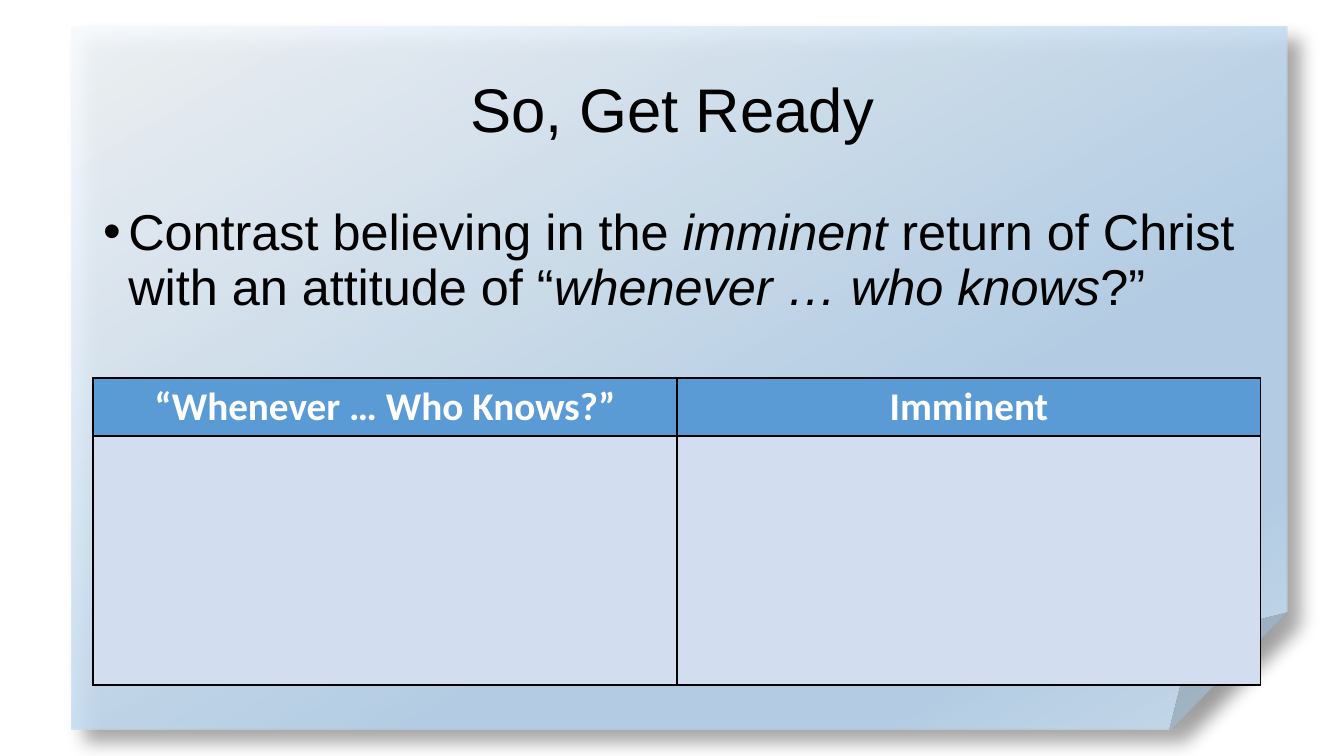
from dataclasses import dataclass

from lxml.etree import SubElement
from pptx import Presentation
from pptx.dml.color import RGBColor
from pptx.enum.shapes import MSO_SHAPE
from pptx.enum.text import MSO_ANCHOR, MSO_AUTO_SIZE, PP_ALIGN
from pptx.oxml.ns import qn
from pptx.util import Emu, Inches, Pt

EMU_PER_PX = 914400 / 100.8
COLOURS = {
    "black": "000000",
    "white": "FFFFFF",
    "header": "5B9BD5",
    "cell": "D2DEEF",
    "pale": "F7FAFD",
    "sky": "B5D2EC",
    "mist": "CEE1F2",
}


@dataclass(frozen=True)
class Box:
    left: int
    top: int
    width: int
    height: int

    def emu(self) -> tuple:
        return px(self.left), px(self.top), px(self.width), px(self.height)


@dataclass(frozen=True)
class TextRun:
    text: str
    italic: bool = False


@dataclass(frozen=True)
class GradientStop:
    percent: int
    colour: str


PAPER = Box(72, 27, 1215, 703)
TITLE = Box(93, 40, 1159, 146)
BODY = Box(93, 202, 1159, 480)
TABLE = Box(93, 378, 1168, 307)
HEADER_HEIGHT = 58
PAPER_OPACITY = 87
PAPER_STOPS = [
    GradientStop(0, "pale"),
    GradientStop(64, "sky"),
    GradientStop(83, "sky"),
    GradientStop(100, "mist"),
]
BODY_RUNS = [
    TextRun("Contrast believing in the "),
    TextRun("imminent", italic=True),
    TextRun(" return of Christ with an attitude of “"),
    TextRun("whenever … who knows", italic=True),
    TextRun("?”"),
]
HEADINGS = ["“Whenever … Who Knows?”", "Imminent"]


def px(value: int) -> Emu:
    return Emu(round(value * EMU_PER_PX))


def rgb(name: str) -> RGBColor:
    return RGBColor.from_string(COLOURS[name])


def add_colour(parent, name: str, opacity: int = 100) -> None:
    colour = SubElement(parent, qn("a:srgbClr"), val=COLOURS[name])
    if opacity < 100:
        SubElement(colour, qn("a:alpha"), val=str(opacity * 1000))


def add_run(paragraph, text: str, font: str, size: int, colour: str,
            italic: bool = False, bold: bool = False) -> None:
    run = paragraph.add_run()
    run.text = text
    run.font.name = font
    run.font.size = Pt(size)
    run.font.color.rgb = rgb(colour)
    run.font.italic = italic
    run.font.bold = bold


def add_paper(slide) -> None:
    shape = slide.shapes.add_shape(MSO_SHAPE.FOLDED_CORNER, *PAPER.emu())
    shape.line.fill.background()
    shape.fill.gradient()
    shape.fill.gradient_angle = 300
    properties = shape._element.spPr
    stop_list = properties.find(".//" + qn("a:gsLst"))
    for old_stop in list(stop_list):
        stop_list.remove(old_stop)
    for stop in PAPER_STOPS:
        element = SubElement(stop_list, qn("a:gs"), pos=str(stop.percent * 1000))
        add_colour(element, stop.colour, PAPER_OPACITY)
    # Soft shadow to the lower right
    shape.shadow.inherit = False
    shadow = SubElement(
        properties.find(qn("a:effectLst")), qn("a:outerShdw"),
        blurRad=str(Pt(13)), dist=str(Pt(13)), dir="2700000",
        algn="tl", rotWithShape="0")
    add_colour(shadow, "black", 40)
    # Send behind the placeholders
    slide.shapes._spTree.insert(2, shape._element)


def prepare_placeholder(placeholder, box: Box, anchor: MSO_ANCHOR):
    placeholder.left, placeholder.top, placeholder.width, placeholder.height = box.emu()
    frame = placeholder.text_frame
    frame.word_wrap = True
    frame.auto_size = MSO_AUTO_SIZE.NONE
    frame.vertical_anchor = anchor
    paragraph = frame.paragraphs[0]
    paragraph.line_spacing = 0.9
    paragraph.space_before = Pt(0)
    return paragraph


def fill_title(slide) -> None:
    paragraph = prepare_placeholder(slide.shapes.title, TITLE, MSO_ANCHOR.MIDDLE)
    paragraph.alignment = PP_ALIGN.CENTER
    add_run(paragraph, "So, Get Ready", "Arial", 44, "black")


def fill_body(slide) -> None:
    paragraph = prepare_placeholder(slide.placeholders[1], BODY, MSO_ANCHOR.TOP)
    paragraph.alignment = PP_ALIGN.LEFT
    properties = paragraph._p.get_or_add_pPr()
    properties.set("marL", str(Inches(0.25)))
    properties.set("indent", str(-Inches(0.25)))
    SubElement(properties, qn("a:buFont"), typeface="Arial")
    SubElement(properties, qn("a:buChar"), char="•")
    for run in BODY_RUNS:
        add_run(paragraph, run.text, "Arial", 36, "black", italic=run.italic)


def format_cell(cell, fill: str) -> None:
    properties = cell._tc.get_or_add_tcPr()
    for side in ("lnL", "lnR", "lnT", "lnB"):
        border = SubElement(properties, qn(f"a:{side}"), w=str(Pt(1)))
        add_colour(SubElement(border, qn("a:solidFill")), "black")
    cell.fill.solid()
    cell.fill.fore_color.rgb = rgb(fill)


def add_contrast_table(slide) -> None:
    table = slide.shapes.add_table(2, len(HEADINGS), *TABLE.emu()).table
    table.rows[0].height = px(HEADER_HEIGHT)
    table.rows[1].height = px(TABLE.height - HEADER_HEIGHT)
    for column, heading in enumerate(HEADINGS):
        header = table.cell(0, column)
        format_cell(header, "header")
        format_cell(table.cell(1, column), "cell")
        paragraph = header.text_frame.paragraphs[0]
        paragraph.alignment = PP_ALIGN.CENTER
        add_run(paragraph, heading, "Calibri", 28, "white", bold=True)


def main() -> None:
    presentation = Presentation()
    presentation.slide_width = px(1344)
    presentation.slide_height = px(756)
    slide = presentation.slides.add_slide(presentation.slide_layouts[1])
    slide.background.fill.solid()
    slide.background.fill.fore_color.rgb = rgb("white")
    add_paper(slide)
    fill_title(slide)
    fill_body(slide)
    add_contrast_table(slide)
    presentation.save("out.pptx")


if __name__ == "__main__":
    main()
